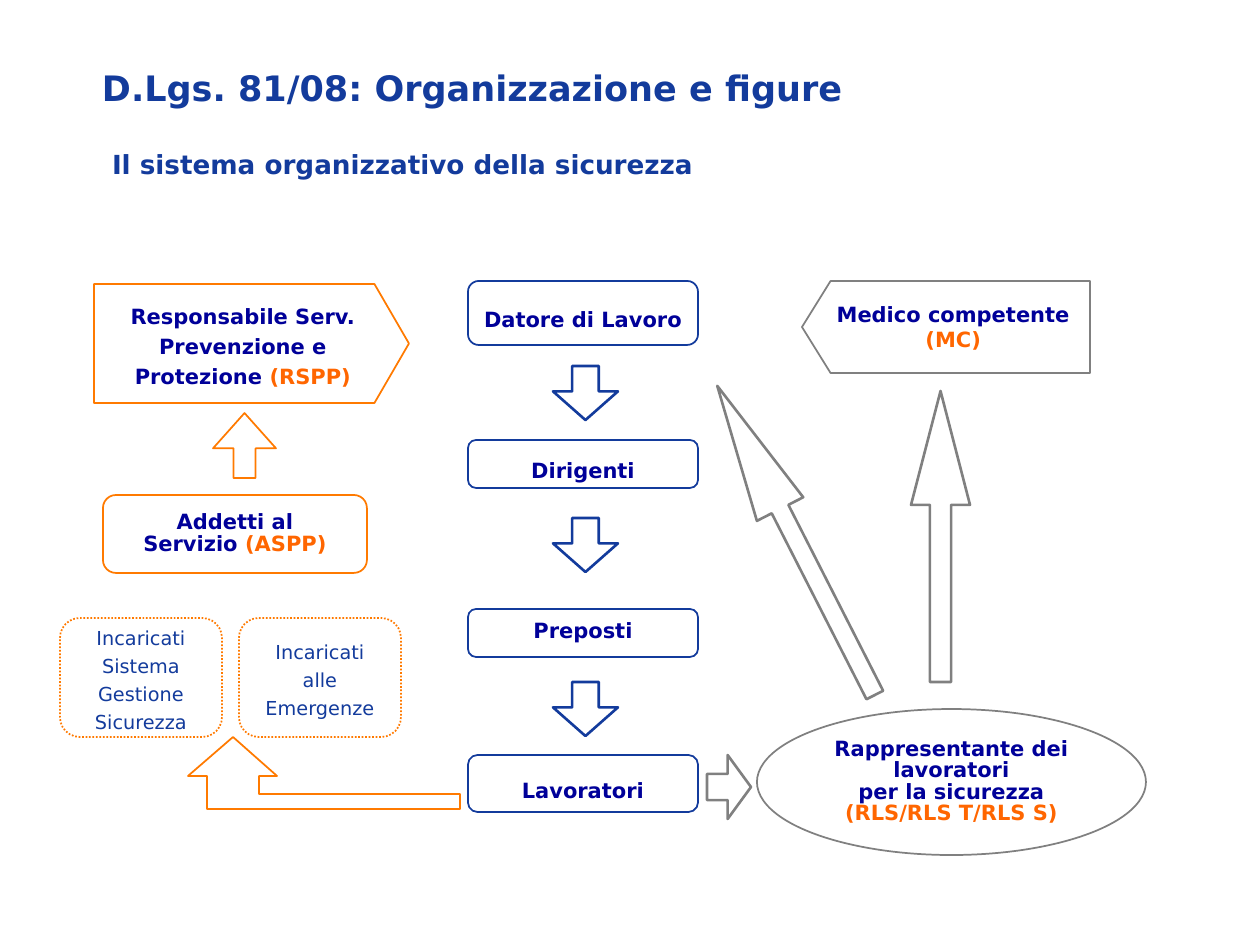
from pptx import Presentation, util as u
from pptx.dml.color import RGBColor
from pptx.enum import dml, shapes, text

PX = 914400 / 126
BLUE, NAVY = "133B9C", "000099"
ORANGE, ACCENT, GREY = "FF7A00", "FF6600", "808080"
GEO = shapes.MSO_SHAPE
hue = RGBColor.from_string

deck = Presentation()
deck.slide_width, deck.slide_height = u.Inches(10), u.Inches(7.5)
slide = deck.slides.add_slide(deck.slide_layouts[6])


def outline(shape, color, width=1, turn=0):
    shape.shadow.inherit = False
    shape.fill.background()
    shape.line.color.rgb = hue(color)
    shape.line.width = u.Pt(width)
    shape.rotation = turn
    return shape


def write(shape, paras, size=12, color=NAVY, bold=True, gap=1.0, wrap=True,
          side=11, align=text.PP_ALIGN.CENTER, anchor=text.MSO_ANCHOR.MIDDLE):
    """Each paragraph is a list of runs; runs in brackets get the accent colour."""
    frame = shape.text_frame
    frame.word_wrap = wrap
    frame.vertical_anchor = anchor
    frame.margin_left = frame.margin_right = round(side * PX)
    frame.margin_top = frame.margin_bottom = round(6 * PX)
    for i, runs in enumerate(paras):
        para = frame.add_paragraph() if i else frame.paragraphs[0]
        para.alignment, para.line_spacing = align, gap
        for words in runs:
            run = para.add_run()
            run.text = words
            font = run.font
            font.name, font.size, font.bold = "DejaVu Sans", u.Pt(size), bold
            font.color.rgb = hue(ACCENT if words.startswith("(") else color)


# Headings
for words, box, size, side, anchor in [
    ("D.Lgs. 81/08: Organizzazione e figure", (94, 35, 1071, 79), 20, 8,
     text.MSO_ANCHOR.BOTTOM),
    ("Il sistema organizzativo della sicurezza", (101, 142, 989, 43), 15, 11,
     text.MSO_ANCHOR.MIDDLE),
]:
    head = slide.shapes.add_textbox(*[round(n * PX) for n in box])
    write(head, [[words]], size, BLUE, side=side,
          align=text.PP_ALIGN.LEFT, anchor=anchor)

# Block arrows: box, turn, colour, width, shaft and head
arrows = [((553, y, 65, 54), 0, BLUE, 1.5, 0.41, 0.53) for y in (366, 518, 682)]
arrows += [
    ((213, 413, 63, 65), 180, ORANGE, 1, 0.35, 0.56),
    ((697, 765, 64, 44), 270, GREY, 1.5, 0.41, 0.53),
    ((911, 391, 59, 291), 180, GREY, 1.5, 0.36, 1.93),
    ((770, 367, 52, 347), 153, GREY, 1.5, 0.36, 2.66),
]
for box, turn, color, width, shaft, tip in arrows:
    arrow = slide.shapes.add_shape(GEO.DOWN_ARROW, *[round(n * PX) for n in box])
    outline(arrow, color, width, turn)
    arrow.adjustments[0], arrow.adjustments[1] = shaft, tip

# Bent arrow from the workers to the appointed staff
pen = slide.shapes.build_freeform(233, 737, scale=PX)
pen.add_line_segments([(277, 776), (259, 776), (259, 794), (460, 794), (460, 809),
                       (207, 809), (207, 776), (188, 776)], close=True)
outline(pen.convert_to_shape(), ORANGE)

# Chain of command
for role, top, high, gap in [
    ("Datore di Lavoro", 281, 64, 1.5),
    ("Dirigenti", 440, 48, 1.5),
    ("Preposti", 609, 48, 0.7),
    ("Lavoratori", 755, 57, 1.5),
]:
    box = [round(n * PX) for n in (468, top, 230, high)]
    node = outline(slide.shapes.add_shape(GEO.ROUNDED_RECTANGLE, *box), BLUE)
    write(node, [[role]], gap=gap, wrap=False)

# Appointed staff
for role, left in [("Incaricati Sistema Gestione Sicurezza", 60),
                   ("Incaricati alle Emergenze", 239)]:
    box = [round(n * PX) for n in (left, 618, 162, 119)]
    node = outline(slide.shapes.add_shape(GEO.ROUNDED_RECTANGLE, *box), ORANGE)
    node.line.dash_style = dml.MSO_LINE.ROUND_DOT
    write(node, [[role]], 11, BLUE, bold=False, gap=1.2)

# Prevention service
box = [round(n * PX) for n in (94, 284, 315, 119)]
chief = outline(slide.shapes.add_shape(GEO.PENTAGON, *box), ORANGE)
chief.adjustments[0] = 0.29
write(chief, [["Responsabile Serv. Prevenzione e Protezione ", "(RSPP)"]], gap=1.2)

box = [round(n * PX) for n in (103, 495, 264, 78)]
team = outline(slide.shapes.add_shape(GEO.ROUNDED_RECTANGLE, *box), ORANGE)
write(team, [["Addetti al Servizio ", "(ASPP)"]], gap=0.85, side=24)

# Doctor: the plate is turned, its text is turned back
box = [round(n * PX) for n in (802, 281, 288, 92)]
doctor = outline(slide.shapes.add_shape(GEO.PENTAGON, *box), GREY, turn=180)
doctor.adjustments[0] = 0.31
write(doctor, [["Medico competente"], ["(MC)"]], wrap=False)
doctor.element.txBody.bodyPr.set("rot", "10800000")

# Workers' representative
box = [round(n * PX) for n in (757, 709, 389, 146)]
rep = outline(slide.shapes.add_shape(GEO.OVAL, *box), GREY)
write(rep, [["Rappresentante dei lavoratori"], ["per la sicurezza"],
            ["(RLS/RLS T/RLS S)"]], gap=0.85)

deck.save("out.pptx")
